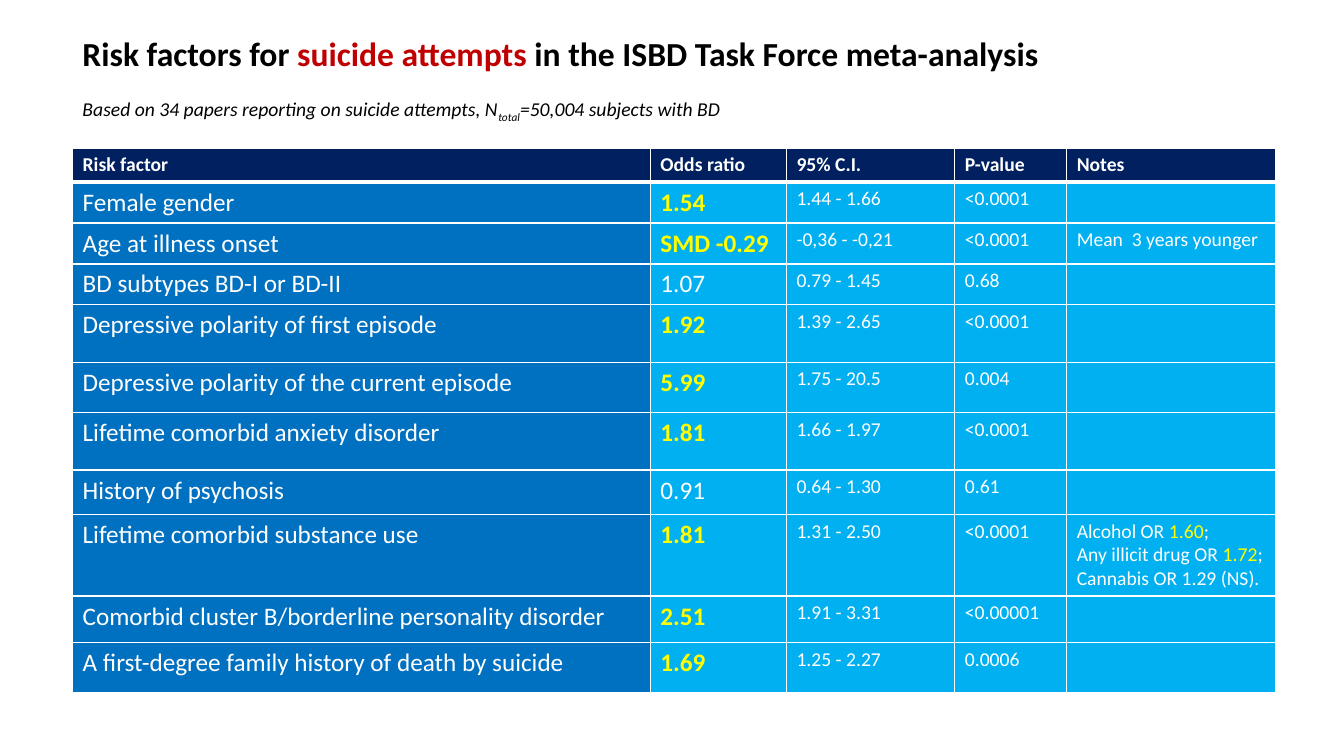
import pptx
import pptx.dml.color
import pptx.enum.text
import pptx.oxml
import pptx.oxml.ns
import pptx.util
from pptx.util import Inches

COLORS = {
    "black": "000000", "red": "C00000", "white": "FFFFFF", "yellow": "FFFF00",
    "navy": "002060", "blue": "0070C0", "sky": "00B0F0",
}
HEADER = ["Risk factor", "Odds ratio", "95% C.I.", "P-value", "Notes"]
COLUMN_WIDTHS = [5.73, 1.35, 1.67, 1.11, 2.07]
HEADER_HEIGHT = 0.33
SUBSTANCE_NOTES = [
    [("Alcohol OR ", {}), ("1.60", {"color": "yellow"}), (";", {})],
    [("Any illicit drug OR ", {}), ("1.72", {"color": "yellow"}),
     ("; Cannabis OR 1.29 (NS).", {})],
]
# Row height, factor, odds ratio, significance, interval, p-value, notes
FACTORS = [
    (0.4, "Female gender", "1.54", True, "1.44 - 1.66", "<0.0001", ""),
    (0.4, "Age at illness onset", "SMD -0.29", True, "-0,36 - -0,21", "<0.0001",
     "Mean  3 years younger"),
    (0.4, "BD subtypes BD-I or BD-II", "1.07", False, "0.79 - 1.45", "0.68", ""),
    (0.57, "Depressive polarity of first episode", "1.92", True, "1.39 - 2.65", "<0.0001", ""),
    (0.5, "Depressive polarity of the current episode", "5.99", True, "1.75 - 20.5", "0.004", ""),
    (0.57, "Lifetime comorbid anxiety disorder", "1.81", True, "1.66 - 1.97", "<0.0001", ""),
    (0.44, "History of psychosis", "0.91", False, "0.64 - 1.30", "0.61", ""),
    (0.8, "Lifetime comorbid substance use", "1.81", True, "1.31 - 2.50", "<0.0001",
     SUBSTANCE_NOTES),
    (0.46, "Comorbid cluster B/borderline personality disorder", "2.51", True,
     "1.91 - 3.31", "<0.00001", ""),
    (0.5, "A first-degree family history of death by suicide", "1.69", True,
     "1.25 - 2.27", "0.0006", ""),
]


def rgb(name):
    return pptx.dml.color.RGBColor.from_string(COLORS[name])


class SlideBuilder:
    def __init__(self, prs, font="Calibri", size=14):
        self.s = prs.slides.add_slide(prs.slide_layouts[6])
        self.font, self.size = font, size

    def add_runs(self, p, runs, **base):
        """Add runs of (text, changes to the base format) to a paragraph."""
        for text, changes in runs:
            fmt = {"name": self.font, "size": self.size, "bold": False,
                   "italic": False, "color": "white", **base, **changes}
            r = p.add_run()
            r.text = text
            r.font.color.rgb = rgb(fmt.pop("color"))
            fmt["size"] = pptx.util.Pt(fmt["size"])
            baseline = fmt.pop("baseline", None)
            for key, value in fmt.items():
                setattr(r.font, key, value)
            if baseline:
                r._r.get_or_add_rPr().set("baseline", str(baseline))

    def heading(self, x, y, w, h, title, subtitle):
        tf = self.s.shapes.add_textbox(*map(Inches, (x, y, w, h))).text_frame
        tf.word_wrap = True
        tf.auto_size = pptx.enum.text.MSO_AUTO_SIZE.SHAPE_TO_FIT_TEXT
        self.add_runs(tf.paragraphs[0], title, size=24, bold=True, color="black")
        p = tf.add_paragraph()
        p.space_before = pptx.util.Pt(17)
        self.add_runs(p, subtitle, italic=True, color="black")

    def table(self, x, y, widths, heights):
        size = (x, y, sum(widths), sum(heights))
        table = self.s.shapes.add_table(
            len(heights), len(widths), *map(Inches, size)).table
        table.horz_banding = False
        for column, width in zip(table.columns, widths):
            column.width = Inches(width)
        for row, height in zip(table.rows, heights):
            row.height = Inches(height)
        return table

    def borders(self, cell, **widths):
        """Draw white borders, 1 pt wide unless a side is given."""
        tcPr = cell._tc.get_or_add_tcPr()
        for side in "LRTB":
            width = pptx.util.Pt(widths.get(side, 1))
            tcPr.append(pptx.oxml.parse_xml(
                f'<a:ln{side} {pptx.oxml.ns.nsdecls("a")} w="{width}"><a:solidFill>'
                f'<a:srgbClr val="{COLORS["white"]}"/></a:solidFill></a:ln{side}>'))

    def cell(self, cell, content, fill, borders, **fmt):
        self.borders(cell, **borders)
        cell.fill.solid()
        cell.fill.fore_color.rgb = rgb(fill)
        if not content:
            return
        paragraphs = [[(content, {})]] if isinstance(content, str) else content
        tf = cell.text_frame
        for i, runs in enumerate(paragraphs):
            self.add_runs(tf.add_paragraph() if i else tf.paragraphs[0], runs, **fmt)


def main():
    prs = pptx.Presentation()
    prs.slide_width, prs.slide_height = Inches(13.33), Inches(7.5)
    slide = SlideBuilder(prs)

    heights = [HEADER_HEIGHT] + [factor[0] for factor in FACTORS]
    table = slide.table(0.72, 1.47, COLUMN_WIDTHS, heights)
    for column, label in enumerate(HEADER):
        slide.cell(table.cell(0, column), label, "navy", {"B": 3}, bold=True)
    for row, (_, factor, odds, significant, *details) in enumerate(FACTORS, 1):
        borders = {"T": 3} if row == 1 else {}
        emphasis = {"bold": True, "color": "yellow"} if significant else {}
        slide.cell(table.cell(row, 0), factor, "blue", borders, size=18)
        slide.cell(table.cell(row, 1), odds, "sky", borders, size=18, **emphasis)
        for column, detail in enumerate(details, 2):
            slide.cell(table.cell(row, column), detail, "sky", borders)

    slide.heading(
        0.72, 0.28, 11.73, 0.98,
        [("Risk factors for ", {}), ("suicide attempts ", {"color": "red"}),
         ("in the ISBD Task Force meta-analysis", {})],
        [("Based on 34 papers reporting on suicide attempts, N", {}),
         ("total", {"baseline": -25000}), ("=50,004 subjects with BD", {})])
    prs.save("out.pptx")


if __name__ == "__main__":
    main()
